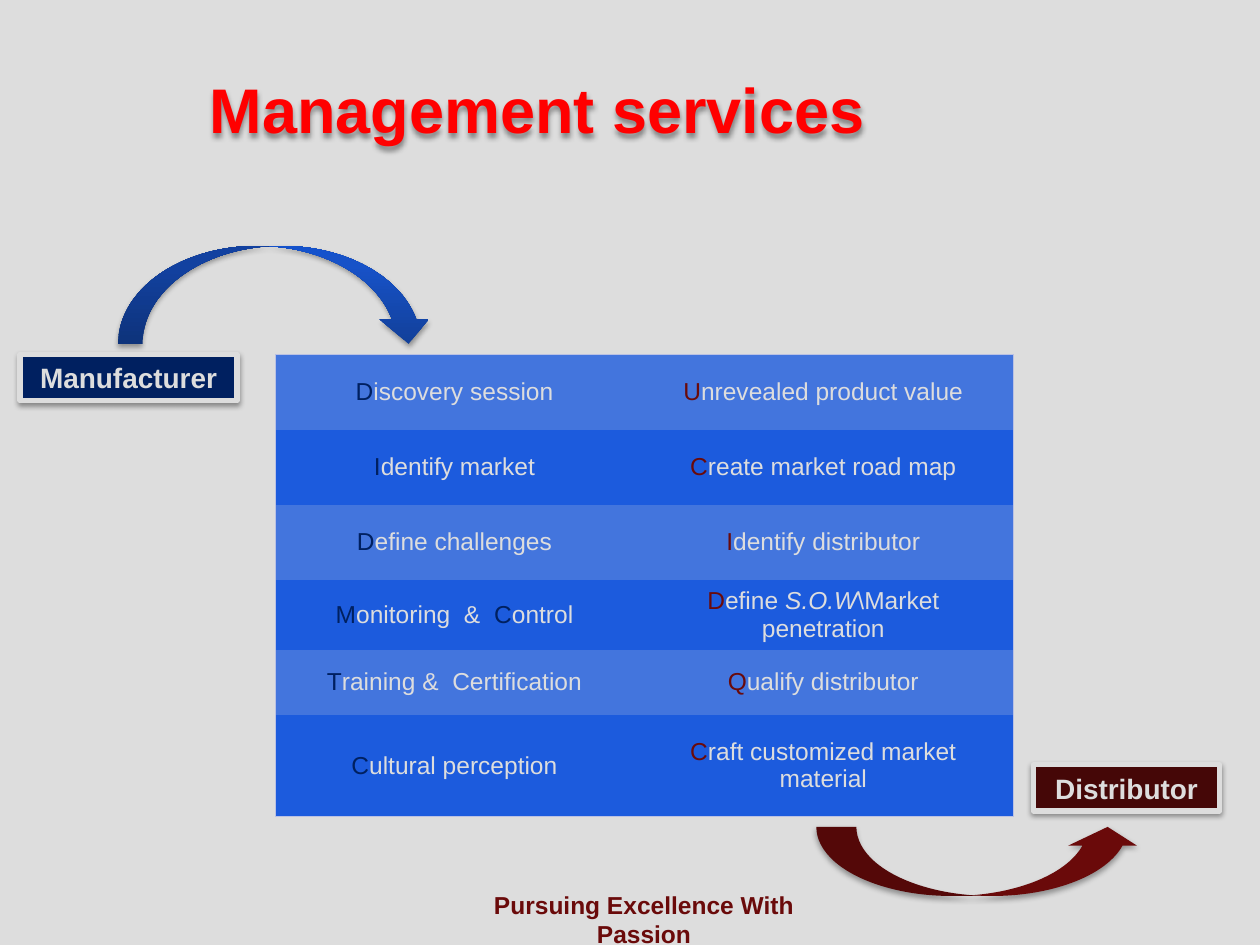
from dataclasses import dataclass

from lxml.etree import SubElement
from pptx import Presentation
from pptx.dml.color import RGBColor
from pptx.enum.shapes import MSO_SHAPE as Preset
from pptx.enum.text import MSO_ANCHOR as Anchor, MSO_AUTO_SIZE as AutoSize, PP_ALIGN as Align
from pptx.oxml.ns import qn
from pptx.util import Pt


@dataclass(frozen=True)
class Theme:
    font: str = "Arial"
    light: str = "DDDDDD"
    navy: str = "002060"
    maroon: str = "6A0A0A"
    dark_maroon: str = "450707"
    red: str = "FF0000"
    bands: tuple = ("4375DD", "1C5BDD")
    border: str = "BAC1E3"
    arrow_stops: tuple = ((0, "12409A"), (80, "1752C8"), (100, "1452CC"))
    title_size: int = 36
    label_size: int = 16
    body_size: int = 14


THEME = Theme()

# *x* takes the column's accent colour, _x_ is italic.
SERVICES = [
    ("*D*iscovery session", "*U*nrevealed product value"),
    ("*I*dentify market", "*C*reate market road map"),
    ("*D*efine challenges", "*I*dentify distributor"),
    ("*M*onitoring  &  *C*ontrol", "*D*efine _S.O.W_\\Market penetration"),
    ("*T*raining &  Certification", "*Q*ualify distributor"),
    ("*C*ultural perception", "*C*raft customized market material"),
]
ROW_HEIGHTS = (43, 43, 43, 40, 37, 58)
COLUMN_WIDTHS = (204.5, 217)


def rgb(color):
    return RGBColor.from_string(color)


def points(*lengths):
    return [Pt(length) for length in lengths]


def add_run(paragraph, text, color, **formats):
    run = paragraph.add_run()
    run.text = text
    run.font.color.rgb = rgb(color)
    for name, value in {"name": THEME.font, **formats}.items():
        setattr(run.font, name, value)


def write_line(frame, text, color, size):
    """Put one bold, centred line of text in a frame."""
    frame.word_wrap = True
    frame.auto_size = AutoSize.NONE
    paragraph = frame.paragraphs[0]
    paragraph.alignment = Align.CENTER
    add_run(paragraph, text, color, size=Pt(size), bold=True)


def add_color(parent, color):
    return SubElement(parent, qn("a:srgbClr"), val=color)


def cast_shadow(shape, opacity, distance):
    shape.shadow.inherit = False
    effects = shape._element.spPr.find(qn("a:effectLst"))
    shadow = SubElement(effects, qn("a:outerShdw"), blurRad=str(Pt(3.1)),
                        dist=str(Pt(distance)), dir="5400000", rotWithShape="0")
    SubElement(add_color(shadow, "000000"), qn("a:alpha"), val=str(opacity * 1000))


def add_title(slide, text):
    title = slide.shapes.title
    title.left, title.top, title.width, title.height = points(96, 34, 422, 56)
    title.text_frame.vertical_anchor = Anchor.MIDDLE
    write_line(title.text_frame, text, THEME.red, THEME.title_size)
    cast_shadow(title, 40, 2)


def add_label(slide, text, box, color):
    label = slide.shapes.add_shape(Preset.RECTANGLE, *points(*box))
    label.fill.solid()
    label.fill.fore_color.rgb = rgb(color)
    label.line.color.rgb = rgb(THEME.light)
    label.line.width = Pt(3)
    cast_shadow(label, 38, 1.6)
    write_line(label.text_frame, text, THEME.light, THEME.label_size)


def add_arrow(slide, preset, box):
    arrow = slide.shapes.add_shape(preset, *points(*box))
    arrow.line.fill.background()
    cast_shadow(arrow, 35, 1.8)
    return arrow


def fill_upward(shape, stops):
    """Fill with a gradient that runs from the bottom to the top."""
    shape.fill.gradient()
    shape.fill.gradient_angle = 90
    stop_list = shape._element.spPr.find(qn("a:gradFill")).find(qn("a:gsLst"))
    for old_stop in list(stop_list):
        stop_list.remove(old_stop)
    for position, color in stops:
        add_color(SubElement(stop_list, qn("a:gs"), pos=str(position * 1000)), color)


def set_borders(cell, outer_edges):
    """Draw the named edges and hide the rest; call before filling the cell."""
    properties = cell._tc.get_or_add_tcPr()
    for edge in "LRTB":
        line = SubElement(properties, qn(f"a:ln{edge}"), w=str(Pt(0.75)))
        if edge in outer_edges:
            add_color(SubElement(line, qn("a:solidFill")), THEME.border)
        else:
            SubElement(line, qn("a:noFill"))


def write_service(cell, markup, accent):
    paragraph = cell.text_frame.paragraphs[0]
    paragraph.alignment = Align.CENTER
    for index, part in enumerate(markup.split("*")):
        color = accent if index % 2 else THEME.light
        for depth, text in enumerate(part.split("_")):
            if text:
                add_run(paragraph, text, color, size=Pt(THEME.body_size), italic=depth % 2 == 1)


def add_services(slide):
    row_count, column_count = len(ROW_HEIGHTS), len(COLUMN_WIDTHS)
    box = points(157.5, 202.5, sum(COLUMN_WIDTHS), sum(ROW_HEIGHTS))
    table = slide.shapes.add_table(row_count, column_count, *box).table
    table.first_row = table.horz_banding = False
    for column, width in zip(table.columns, COLUMN_WIDTHS):
        column.width = Pt(width)
    for row, (height, services) in enumerate(zip(ROW_HEIGHTS, SERVICES)):
        table.rows[row].height = Pt(height)
        for column, (markup, accent) in enumerate(zip(services, (THEME.navy, THEME.maroon))):
            cell = table.cell(row, column)
            top_or_bottom = {0: "T", row_count - 1: "B"}.get(row, "")
            set_borders(cell, "LR"[column] + top_or_bottom)
            cell.fill.solid()
            cell.fill.fore_color.rgb = rgb(THEME.bands[row % 2])
            cell.vertical_anchor = Anchor.MIDDLE
            write_service(cell, markup, accent)


def add_tagline(slide, text):
    tagline = slide.shapes.add_textbox(*points(248, 505, 240, 30))
    write_line(tagline.text_frame, text, THEME.maroon, THEME.body_size)


def main():
    deck = Presentation()
    deck.slide_width, deck.slide_height = points(720, 540)
    slide = deck.slides.add_slide(deck.slide_layouts[5])
    slide.background.fill.solid()
    slide.background.fill.fore_color.rgb = rgb(THEME.light)

    add_title(slide, "Management services")
    add_services(slide)
    add_label(slide, "Manufacturer", (11.5, 202.5, 124, 26.5), THEME.navy)
    add_label(slide, "Distributor", (590.5, 437, 106.5, 26.5), THEME.dark_maroon)

    to_services = add_arrow(slide, Preset.CURVED_DOWN_ARROW, (67.5, 140.5, 180, 56))
    fill_upward(to_services, THEME.arrow_stops)

    to_distributor = add_arrow(slide, Preset.CURVED_UP_ARROW, (466.5, 472.5, 186, 39.5))
    to_distributor.fill.solid()
    to_distributor.fill.fore_color.rgb = rgb(THEME.maroon)
    for index, value in enumerate((0.58, 0.99, 0.27)):
        to_distributor.adjustments[index] = value

    add_tagline(slide, "Pursuing Excellence With Passion")
    deck.save("out.pptx")


if __name__ == "__main__":
    main()
